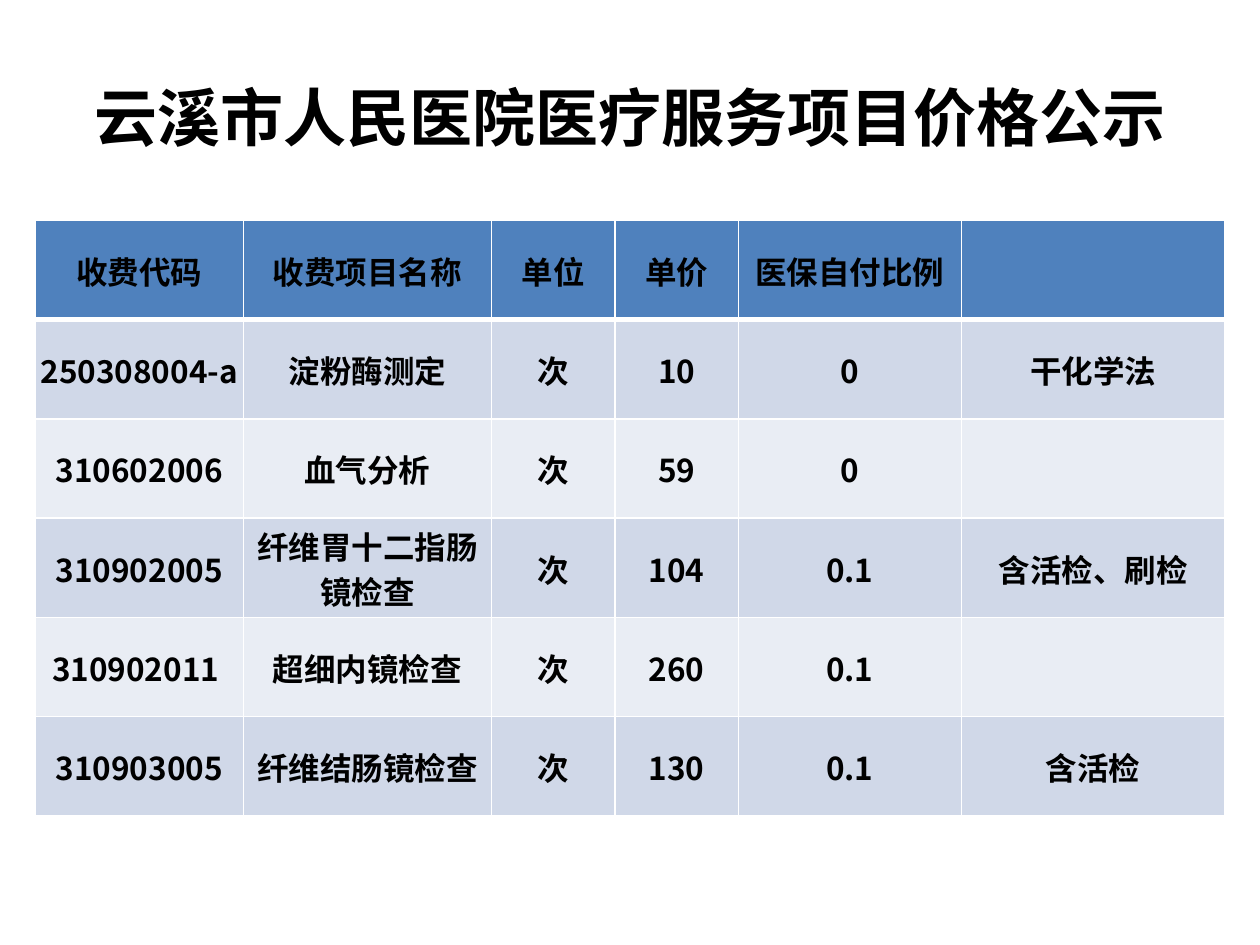
from lxml.etree import SubElement
from pptx import Presentation
from pptx.dml.color import RGBColor
from pptx.enum.text import MSO_ANCHOR, PP_ALIGN
from pptx.oxml.ns import qn
from pptx.util import Pt

# Content
TITLE = "云溪市人民医院医疗服务项目价格公示"
PRICE_ROWS = [
    ("收费代码", "收费项目名称", "单位", "单价", "医保自付比例", ""),
    ("250308004-a", "淀粉酶测定", "次", "10", "0", "干化学法"),
    ("310602006", "血气分析", "次", "59", "0", ""),
    ("310902005", "纤维胃十二指肠镜检查", "次", "104", "0.1", "含活检、刷检"),
    ("310902011 ", "超细内镜检查", "次", "260", "0.1", ""),
    ("310903005", "纤维结肠镜检查", "次", "130", "0.1", "含活检"),
]

# Layout and format, in points
COLUMN_WIDTHS = [118.8, 141.8, 70.6, 70.6, 127.4, 150.5]
ROW_HEIGHT = 56.7
TABLE_LEFT, TABLE_TOP = 20.2, 126
TITLE_BOX = {"left": 36, "top": 21.6, "width": 648, "height": 90}
TITLE_FONT = {"name": "Calibri", "size": Pt(36), "bold": True}
CELL_FONT = {"name": "Noto Sans CJK SC", "size": Pt(18), "bold": True}
CELL_FORMAT = {
    "vertical_anchor": MSO_ANCHOR.MIDDLE,
    "margin_left": Pt(0.75), "margin_top": Pt(0.75),
    "margin_right": Pt(0.75), "margin_bottom": Pt(0),
}
HEADER_FILL, BAND_FILLS = "4F81BD", ("E9EDF4", "D0D8E8")
BLACK, WHITE = "000000", "FFFFFF"


def set_color(color_format, value):
    color_format.rgb = RGBColor.from_string(value)


def set_attributes(target, values):
    for name, value in values.items():
        setattr(target, name, value)


def write_text(text_frame, text, font_format):
    paragraph = text_frame.paragraphs[0]
    paragraph.alignment = PP_ALIGN.CENTER
    run = paragraph.add_run()
    run.text = text
    set_attributes(run.font, font_format)
    set_color(run.font.color, BLACK)
    SubElement(run.font._element, qn("a:ea"), typeface="Noto Sans CJK SC")


def add_borders(cell, widths):
    properties = cell._tc.get_or_add_tcPr()
    for side, width in widths.items():
        line = SubElement(properties, qn(f"a:ln{side}"), w=str(Pt(width)))
        fill = SubElement(line, qn("a:solidFill"))
        SubElement(fill, qn("a:srgbClr"), val=WHITE)


presentation = Presentation()
presentation.slide_width, presentation.slide_height = Pt(720), Pt(540)
slide = presentation.slides.add_slide(presentation.slide_layouts[5])

# Title
title = slide.shapes.title
set_attributes(title, {name: Pt(value) for name, value in TITLE_BOX.items()})
title.text_frame.vertical_anchor = MSO_ANCHOR.MIDDLE
write_text(title.text_frame, TITLE, TITLE_FONT)

# Price table
table = slide.shapes.add_table(
    len(PRICE_ROWS), len(COLUMN_WIDTHS), Pt(TABLE_LEFT), Pt(TABLE_TOP),
    Pt(sum(COLUMN_WIDTHS)), Pt(ROW_HEIGHT * len(PRICE_ROWS))).table
for column, width in zip(table.columns, COLUMN_WIDTHS):
    column.width = Pt(width)

for row_index, values in enumerate(PRICE_ROWS):
    table.rows[row_index].height = Pt(ROW_HEIGHT)
    row_fill = BAND_FILLS[row_index % 2] if row_index else HEADER_FILL
    borders = {"L": 1, "R": 1, "T": 3 if row_index == 1 else 1,
               "B": 3 if row_index == 0 else 1}
    for column_index, text in enumerate(values):
        cell = table.cell(row_index, column_index)
        set_attributes(cell, CELL_FORMAT)
        add_borders(cell, borders)
        cell.fill.solid()
        set_color(cell.fill.fore_color, row_fill)
        if text:
            write_text(cell.text_frame, text, CELL_FONT)

presentation.save("out.pptx")
